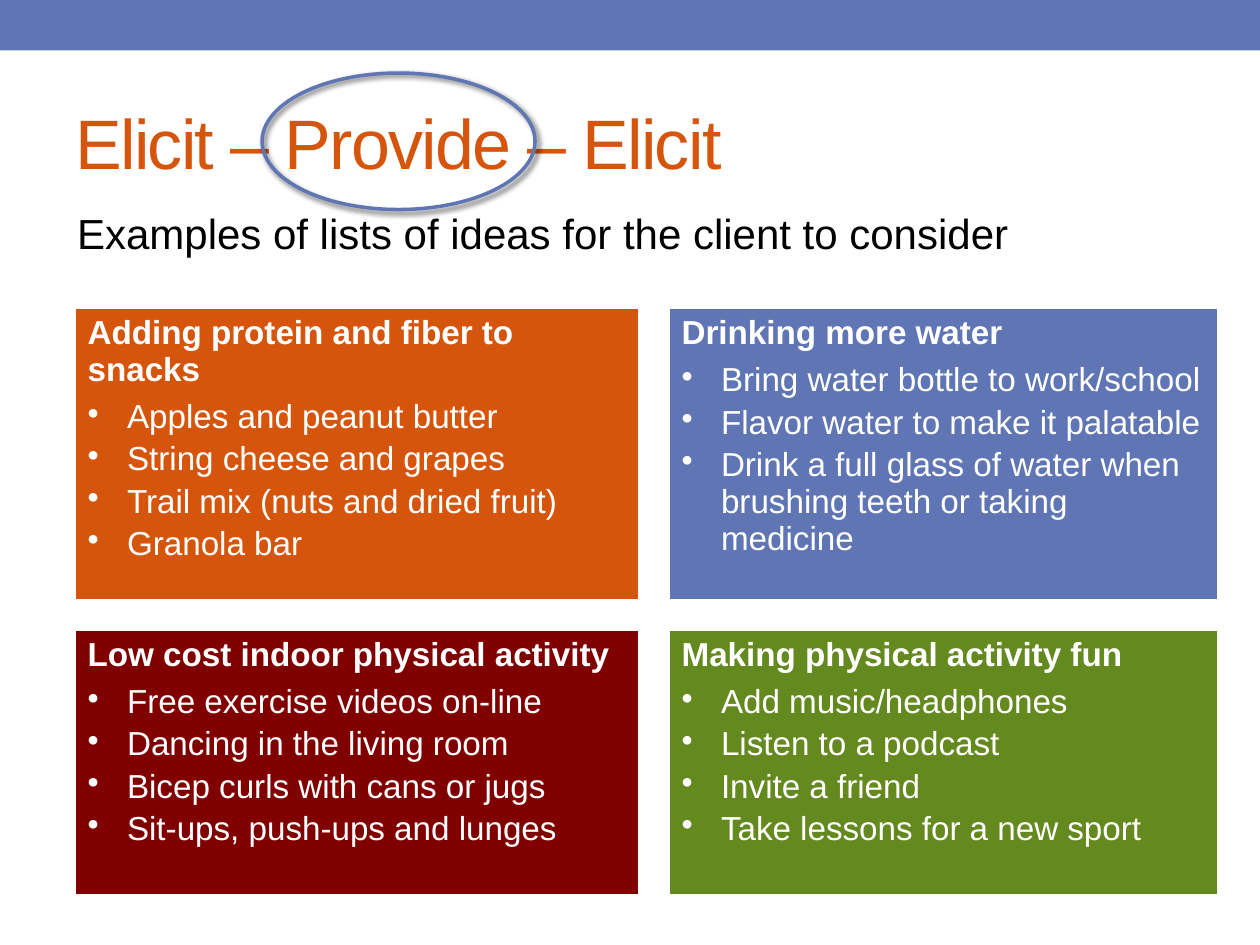
from pptx import Presentation
from pptx.dml.color import RGBColor as RGB
from pptx.enum.shapes import MSO_SHAPE as Shape
from pptx.enum.text import MSO_ANCHOR as Anchor
from pptx.oxml import parse_xml
from pptx.oxml.ns import nsdecls
from pptx.util import Pt
from lxml import etree

BLUE = RGB(0x60, 0x76, 0xB4)
ORANGE = RGB(0xD6, 0x55, 0x0D)
RED = RGB(0x80, 0x00, 0x00)
GREEN = RGB(0x63, 0x89, 0x1F)
WHITE = RGB(0xFF, 0xFF, 0xFF)
BLACK = RGB(0x00, 0x00, 0x00)


def style(para, size, color, bold=False):
    font = para.font
    font.name, font.size, font.bold = "Arial", Pt(size), bold
    font.color.rgb = color


def label(text, box, size, color, anchor):
    frame = slide.shapes.add_textbox(*map(Pt, box)).text_frame
    frame.word_wrap = True
    frame.vertical_anchor = anchor
    para = frame.paragraphs[0]
    para.text = text
    style(para, size, color)
    return para


deck = Presentation()
deck.slide_width, deck.slide_height = Pt(720), Pt(540)
slide = deck.slides.add_slide(deck.slide_layouts[6])

# Top band
band = slide.shapes.add_shape(Shape.RECTANGLE, 0, 0, Pt(720), Pt(28.8))
band.shadow.inherit = False
band.fill.solid()
band.fill.fore_color.rgb = BLUE
band.line.fill.background()

# Title, with tightened letters
title = label("Elicit – Provide – Elicit", (36, 41.75, 648, 78), 40, ORANGE,
              Anchor.MIDDLE)
title.runs[0].font._element.set("spc", "-100")

# Table of four idea lists, parted by a narrow row and column
ideas = {
    (0, 0): (ORANGE, "Adding protein and fiber to snacks", [
        "Apples and peanut butter", "String cheese and grapes",
        "Trail mix (nuts and dried fruit)", "Granola bar"]),
    (0, 2): (BLUE, "Drinking more water", [
        "Bring water bottle to work/school",
        "Flavor water to make it palatable",
        "Drink a full glass of water when brushing teeth or taking medicine"]),
    (2, 0): (RED, "Low cost indoor physical activity", [
        "Free exercise videos on-line", "Dancing in the living room",
        "Bicep curls with cans or jugs", "Sit-ups, push-ups and lunges"]),
    (2, 2): (GREEN, "Making physical activity fun", [
        "Add music/headphones", "Listen to a podcast",
        "Invite a friend", "Take lessons for a new sport"]),
}
table = slide.shapes.add_table(3, 3, Pt(42.9), Pt(176), Pt(653), Pt(335.5)).table
table.first_row = table.horz_banding = False
for col, width in zip(table.columns, (322.2, 17.1, 313.7)):
    col.width = Pt(width)
for row, height in zip(table.rows, (166.9, 17.1, 151.5)):
    row.height = Pt(height)

for r in range(3):
    for c in range(3):
        cell = table.cell(r, c)
        frame = cell.text_frame
        if (r, c) not in ideas:
            # Small type keeps the gaps narrow
            cell.fill.background()
            para = frame.paragraphs[0]
            para._p.append(parse_xml(f'<a:endParaRPr {nsdecls("a")} sz="800"/>'))
            continue
        color, head, items = ideas[r, c]
        cell.fill.solid()
        cell.fill.fore_color.rgb = color
        frame.text = "\n".join([head] + items)
        for n, para in enumerate(frame.paragraphs):
            style(para, 19, WHITE, bold=n == 0)
            para.space_after = Pt(3 if n else 6)
            if n:
                props = para._p.get_or_add_pPr()
                props.set("marL", str(Pt(22.5)))
                props.set("indent", str(Pt(-22.5)))
                dot = parse_xml(f'<a:buChar {nsdecls("a")} char="•"/>')
                props.find("{*}defRPr").addprevious(dot)

# Lead-in line
label("Examples of lists of ideas for the client to consider",
      (37, 114.75, 593, 65.5), 24, BLACK, Anchor.TOP)

# Ring around the middle word, with a soft shadow
ring = slide.shapes.add_shape(Shape.OVAL, Pt(149.75), Pt(41.75), Pt(156), Pt(78))
ring.fill.background()
ring.line.color.rgb = BLUE
ring.line.width = Pt(2)
ring.shadow.inherit = False
glow = ring._element.spPr.find("{*}effectLst")
ns = "{http://schemas.openxmlformats.org/drawingml/2006/main}"
shade = etree.SubElement(glow, ns + "outerShdw", blurRad=str(Pt(3)),
                         dist=str(Pt(2)), dir="2700000", rotWithShape="0")
tone = etree.SubElement(shade, ns + "srgbClr", val="000000")
etree.SubElement(tone, ns + "alpha", val="60000")

deck.save("out.pptx")
